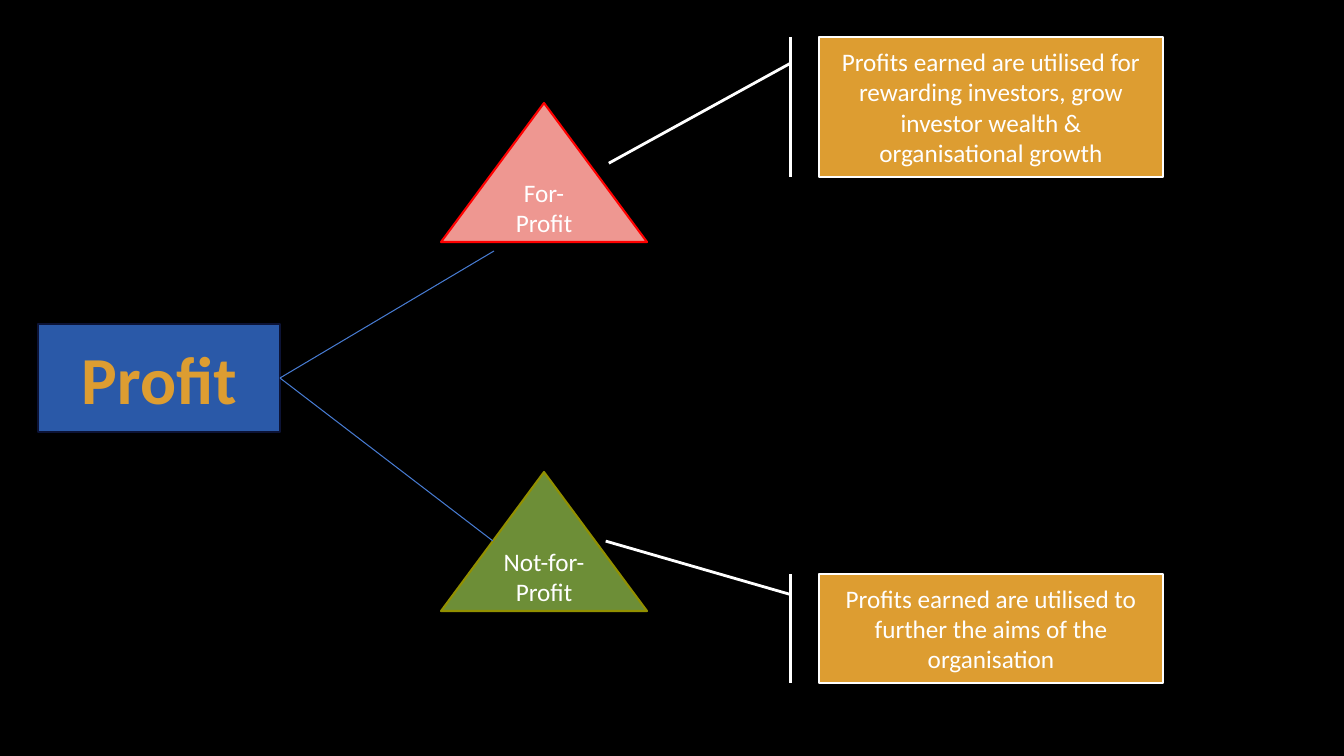
from pptx import Presentation
from pptx.dml.color import RGBColor
from pptx.enum.shapes import MSO_CONNECTOR, MSO_SHAPE
from pptx.enum.text import MSO_ANCHOR, PP_ALIGN
from pptx.oxml import parse_xml
from pptx.oxml.ns import nsdecls
from pptx.util import Pt

BLACK = RGBColor(0x00, 0x00, 0x00)
WHITE = RGBColor(0xFF, 0xFF, 0xFF)
BLUE = RGBColor(0x2A, 0x59, 0xA8)
NAVY = RGBColor(0x0C, 0x13, 0x36)
BRANCH_BLUE = RGBColor(0x47, 0x7B, 0xD1)
AMBER = RGBColor(0xDD, 0x9D, 0x31)
PINK = RGBColor(0xEE, 0x97, 0x91)
RED = RGBColor(0xFF, 0x00, 0x00)
GREEN = RGBColor(0x6D, 0x8E, 0x37)
OLIVE = RGBColor(0x92, 0x90, 0x00)

# Content: lengths in px, callout pointer as (y1, x1, y2, x2) fractions
ROOT = "Profit"
BRANCHES = [
    {"kind": "For-Profit", "fill": PINK, "edge": RED, "top": 103,
     "branch_end": (494, 251),
     "use": "Profits earned are utilised for rewarding investors, "
            "grow investor wealth & organisational growth",
     "use_top": 37, "use_height": 140, "pointer": (0.188, -0.083, 0.902, -0.611)},
    {"kind": "Not-for-Profit", "fill": GREEN, "edge": OLIVE, "top": 472,
     "branch_end": (493, 541),
     "use": "Profits earned are utilised to further the aims of the organisation",
     "use_top": 574, "use_height": 109, "pointer": (0.188, -0.083, -0.302, -0.62)},
]
KIND_LEFT, KIND_WIDTH, KIND_HEIGHT = 441, 206, 139
USE_LEFT, USE_WIDTH = 819, 344
EMU_PER_PX = 914400 / 100.8


def px(length):
    return round(length * EMU_PER_PX)


prs = Presentation()
prs.slide_width, prs.slide_height = px(1344), px(756)
slide = prs.slides.add_slide(prs.slide_layouts[6])
slide.background.fill.solid()
slide.background.fill.fore_color.rgb = BLACK


def add_node(preset, box, text, fill, edge, edge_width, size=18, color=WHITE):
    node = slide.shapes.add_shape(preset, *map(px, box))
    node.shadow.inherit = False
    node.fill.solid()
    node.fill.fore_color.rgb = fill
    node.line.color.rgb = edge
    node.line.width = Pt(edge_width)
    frame = node.text_frame
    frame.word_wrap = True
    frame.vertical_anchor = MSO_ANCHOR.MIDDLE
    frame.text = text
    frame.paragraphs[0].alignment = PP_ALIGN.CENTER
    font = frame.paragraphs[0].runs[0].font
    font.name, font.size = "Calibri", Pt(size)
    font.color.rgb = color
    return node


# Root box with outlined lettering
root = add_node(MSO_SHAPE.RECTANGLE, (38, 324, 242, 108), ROOT, BLUE, NAVY, 1.5, 48, AMBER)
root_run = root.text_frame.paragraphs[0].runs[0]
root_run.font.bold = True
root_run.font._element.insert(0, parse_xml(
    f'<a:ln {nsdecls("a")} w="{Pt(0.75)}"><a:solidFill>'
    f'<a:srgbClr val="{BLACK}"/></a:solidFill></a:ln>'))

for branch in BRANCHES:
    # Kind of organisation
    kind = add_node(MSO_SHAPE.ISOSCELES_TRIANGLE,
                    (KIND_LEFT, branch["top"], KIND_WIDTH, KIND_HEIGHT),
                    branch["kind"], branch["fill"], branch["edge"], 1.5)
    frame = kind.text_frame
    frame.margin_left = frame.margin_right = px(8)
    frame.margin_top = frame.margin_bottom = px(4)

    # Line from the root box
    link = slide.shapes.add_connector(
        MSO_CONNECTOR.STRAIGHT, px(280), px(378), *map(px, branch["branch_end"]))
    link.begin_connect(root, 3)
    link.line.color.rgb = BRANCH_BLUE
    link.line.width = Pt(0.75)
    link._element.spPr.append(parse_xml(f'<a:effectLst {nsdecls("a")}/>'))

    # Callout on how profits are used
    use = add_node(MSO_SHAPE.LINE_CALLOUT_1_BORDER_AND_ACCENT_BAR,
                   (USE_LEFT, branch["use_top"], USE_WIDTH, branch["use_height"]),
                   branch["use"], AMBER, WHITE, 2)
    for index, fraction in enumerate(branch["pointer"]):
        use.adjustments[index] = fraction

prs.save("out.pptx")
